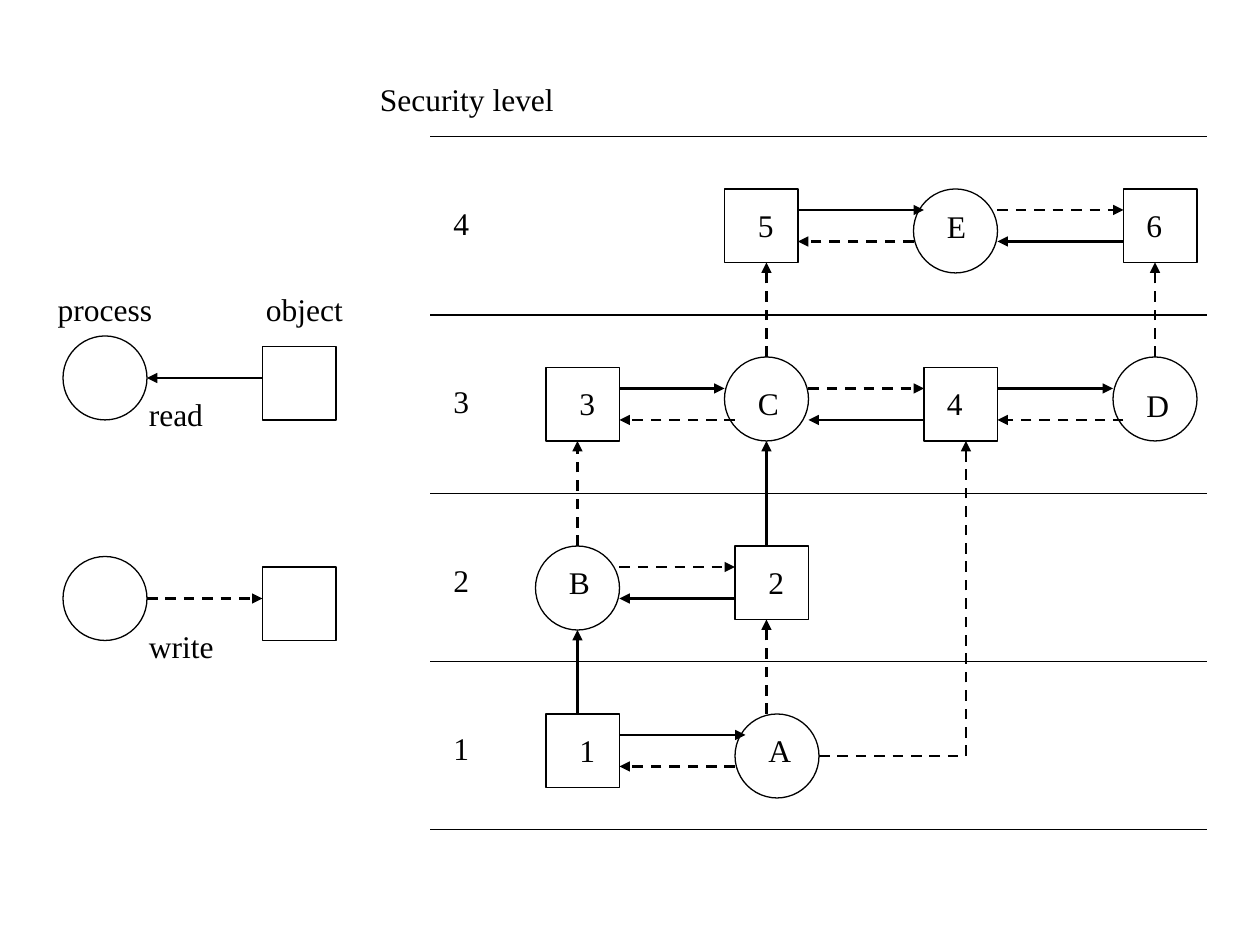
from lxml import etree
from pptx import Presentation
from pptx.dml.color import RGBColor
from pptx.enum import dml, shapes, text
from pptx.oxml import ns
from pptx.util import Pt

COLORS = {"ink": "000000"}
INK = RGBColor.from_string(COLORS["ink"])
FONT = "Times New Roman"
BOX_SIZE = 42
CIRCLE_SIZE = 48

deck = Presentation()
deck.slide_width, deck.slide_height = Pt(720), Pt(540)
page = deck.slides.add_slide(deck.slide_layouts[6])


def add_label(wording, left, top, width, align=text.PP_ALIGN.LEFT):
    box = page.shapes.add_textbox(Pt(left), Pt(top), Pt(width), Pt(29))
    frame = box.text_frame
    frame.word_wrap = True
    frame.auto_size = text.MSO_AUTO_SIZE.SHAPE_TO_FIT_TEXT
    frame.text = wording
    para = frame.paragraphs[0]
    para.alignment = align
    span = para.runs[0]
    span.font.name = FONT
    span.font.size = Pt(18)
    span.font.color.rgb = INK


def add_line(x1, y1, x2, y2, weight=1.5, dashed=False, head=True):
    line = page.shapes.add_connector(
        shapes.MSO_CONNECTOR.STRAIGHT, Pt(x1), Pt(y1), Pt(x2), Pt(y2))
    line.line.color.rgb = INK
    line.line.width = Pt(weight)
    if dashed:
        line.line.dash_style = dml.MSO_LINE.DASH
    properties = line._element.spPr
    if head:
        etree.SubElement(line.line._get_or_add_ln(), ns.qn("a:tailEnd"), type="triangle")
    etree.SubElement(properties, ns.qn("a:effectLst"))


add_label("Security level", 210, 42, 210)
level_tops = {"4": 78, "3": 180, "2": 282, "1": 378}
for level, top in level_tops.items():
    add_line(246, top, 690, top, weight=0.75, head=False)
    add_label(level, 252, top + 35, 24)
add_line(246, 474, 690, 474, weight=0.75, head=False)

objects = [
    ("5", 414, 108, 12, 6), ("6", 642, 108, 6, 6),
    ("3", 312, 210, 12, 6), ("4", 528, 210, 6, 6),
    ("2", 420, 312, 12, 6), ("1", 312, 408, 12, 6),
    ("", 150, 198, 0, 0), ("", 150, 324, 0, 0),
]
processes = [
    ("E", 522, 108, 12, 7), ("C", 414, 204, 12, 12),
    ("D", 636, 204, 12, 13), ("B", 306, 312, 12, 6),
    ("A", 420, 408, 12, 6),
    ("", 36, 192, 0, 0), ("", 36, 318, 0, 0),
]
for nodes, kind, size in (
    (objects, shapes.MSO_SHAPE.RECTANGLE, BOX_SIZE),
    (processes, shapes.MSO_SHAPE.OVAL, CIRCLE_SIZE),
):
    for name, left, top, indent, drop in nodes:
        node = page.shapes.add_shape(kind, Pt(left), Pt(top), Pt(size), Pt(size))
        node.shadow.inherit = False
        node.fill.background()
        node.line.color.rgb = INK
        node.line.width = Pt(0.75)
        if name:
            add_label(name, left + indent, top + drop, 24)

reads = [
    (456, 120, 528, 120), (642, 138, 570, 138),
    (354, 222, 414, 222), (528, 240, 462, 240), (570, 222, 636, 222),
    (438, 312, 438, 252), (420, 342, 354, 342),
    (330, 408, 330, 360), (354, 420, 426, 420),
    (150, 216, 84, 216),
]
writes = [
    (522, 138, 456, 138), (570, 120, 642, 120),
    (438, 204, 438, 150), (660, 204, 660, 150),
    (420, 240, 354, 240), (462, 222, 528, 222), (642, 240, 570, 240),
    (330, 312, 330, 252), (354, 324, 420, 324),
    (438, 408, 438, 354), (420, 438, 354, 438), (552, 432, 552, 252),
    (84, 342, 150, 342),
]
for arrows, dashed in ((reads, False), (writes, True)):
    for ends in arrows:
        add_line(*ends, dashed=dashed)
add_line(468, 432, 552, 432, dashed=True, head=False)

add_label("process", 6, 162, 108, text.PP_ALIGN.CENTER)
add_label("object", 120, 162, 108, text.PP_ALIGN.CENTER)
add_label("read", 78, 222, 108)
add_label("write", 78, 355, 108)

deck.save("out.pptx")
